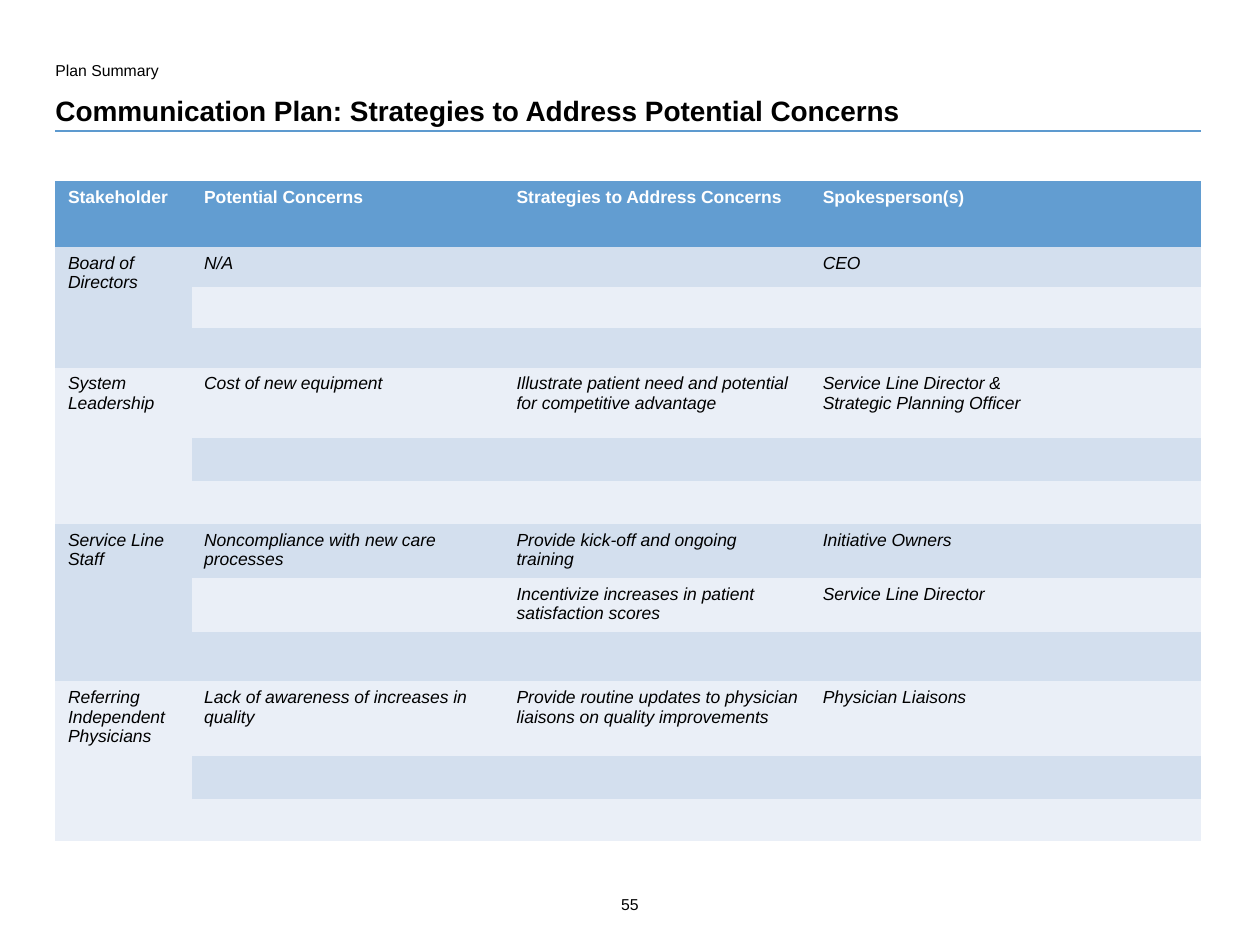
from lxml.etree import SubElement
from pptx import Presentation
from pptx.dml.color import RGBColor
from pptx.enum.shapes import MSO_CONNECTOR
from pptx.enum.text import MSO_ANCHOR, MSO_AUTO_SIZE, PP_ALIGN
from pptx.oxml.ns import qn
from pptx.util import Inches, Pt

TITLE = "Communication Plan: Strategies to Address Potential Concerns"
SECTION = "Plan Summary"
PAGE_NUMBER = "55"
HEADERS = ["Stakeholder", "Potential Concerns", "Strategies to Address Concerns", "Spokesperson(s)"]
GROUPS = [
    ("Board of Directors", [("N/A", "", "CEO")]),
    ("System Leadership", [
        ("Cost of new equipment",
         "Illustrate patient need and potential for competitive advantage",
         "Service Line Director & \vStrategic Planning Officer"),
    ]),
    ("Service Line Staff", [
        ("Noncompliance with new care processes", "Provide kick-off and ongoing training", "Initiative Owners"),
        ("", "Incentivize increases in patient satisfaction scores", "Service Line Director"),
    ]),
    ("Referring Independent Physicians", [
        ("Lack of awareness of increases in quality",
         "Provide routine updates to physician liaisons on quality improvements",
         "Physician Liaisons"),
    ]),
]
GROUP_ROWS = 3
COLUMN_WIDTHS = [1.08, 2.48, 2.43, 3.1]
ROW_HEIGHTS = [0.52, 0.32, 0.32, 0.32, 0.56, 0.34, 0.34, 0.43, 0.43, 0.39, 0.59, 0.34, 0.34]
LEFT, TABLE_TOP, RULE_TOP = 0.44, 1.44, 1.04
WIDTH = sum(COLUMN_WIDTHS)

BLACK = RGBColor(0x00, 0x00, 0x00)
WHITE = RGBColor(0xFF, 0xFF, 0xFF)
RULE_BLUE = RGBColor(0x5D, 0x9A, 0xCF)
HEADER_BLUE = RGBColor(0x62, 0x9D, 0xD1)
BANDS = [RGBColor(0xD3, 0xDF, 0xEE), RGBColor(0xEA, 0xEF, 0xF7)]
NO_STYLE = "{2D5ABB26-0587-4C30-8999-92F81FD0307C}"


def write(frame, text, size, color=BLACK, align=PP_ALIGN.LEFT, **styles):
    """Put one formatted paragraph in a text frame, sizing breaks and empty ends too."""
    para = frame.paragraphs[0]
    para.text = text
    para.alignment = align
    formats = {"name": "Arial", "size": Pt(size), "bold": False, "italic": False, **styles}
    for span in para.runs:
        for name, value in formats.items():
            setattr(span.font, name, value)
        span.font.color.rgb = color
    for line_break in para._p.findall(qn("a:br")):
        SubElement(line_break, qn("a:rPr"), sz=str(size * 100))
    if not text:
        SubElement(para._p, qn("a:endParaRPr"), sz=str(size * 100))


def place(box, left, top, width, height, side, edge, anchor):
    """Set a text shape's position, insets and anchor."""
    for name, value in zip(("left", "top", "width", "height"), (left, top, width, height)):
        setattr(box, name, Inches(value))
    settings = {
        "margin_left": Inches(side), "margin_right": Inches(side),
        "margin_top": Inches(edge), "margin_bottom": Inches(edge),
        "word_wrap": True, "auto_size": MSO_AUTO_SIZE.NONE, "vertical_anchor": anchor,
    }
    for name, value in settings.items():
        setattr(box.text_frame, name, value)


def add_label(page, text, bounds, side, align):
    """Add a small text box."""
    box = page.shapes.add_textbox(0, 0, 0, 0)
    place(box, *bounds, side, 0.04, MSO_ANCHOR.TOP)
    write(box.text_frame, text, 9, align=align)


def add_rule(page):
    """Draw the line under the title."""
    rule = page.shapes.add_connector(
        MSO_CONNECTOR.STRAIGHT, Inches(LEFT), Inches(RULE_TOP), Inches(LEFT + WIDTH), Inches(RULE_TOP))
    rule.line.color.rgb = RULE_BLUE
    rule.line.width = Pt(0.75)
    SubElement(rule._element.spPr, qn("a:effectLst"))


def add_plan(page):
    """Add the stakeholder table with alternating bands and merged first-column cells."""
    rows = [HEADERS]
    for stakeholder, entries in GROUPS:
        blanks = [("", "", "")] * (GROUP_ROWS - len(entries))
        for index, entry in enumerate(entries + blanks):
            rows.append(["" if index else stakeholder, *entry])
    table = page.shapes.add_table(
        len(rows), len(HEADERS), Inches(LEFT), Inches(TABLE_TOP),
        Inches(WIDTH), Inches(sum(ROW_HEIGHTS))).table
    table._tbl.tblPr.find(qn("a:tableStyleId")).text = NO_STYLE
    for column, width in zip(table.columns, COLUMN_WIDTHS):
        column.width = Inches(width)
    for number, (row, height, texts) in enumerate(zip(table.rows, ROW_HEIGHTS, rows)):
        row.height = Inches(height)
        for cell, text in zip(row.cells, texts):
            cell.fill.solid()
            cell.fill.fore_color.rgb = BANDS[(number - 1) % 2] if number else HEADER_BLUE
            write(cell.text_frame, text, 10, BLACK if number else WHITE,
                  bold=number == 0, italic=number > 0)
    for first in range(1, len(rows), GROUP_ROWS):
        table.cell(first, 0).merge(table.cell(first + GROUP_ROWS - 1, 0))


def main():
    """Build and save the slide."""
    deck = Presentation()
    deck.slide_width, deck.slide_height = Inches(10), Inches(7.5)
    page = deck.slides.add_slide(deck.slide_layouts[5])
    add_rule(page)
    place(page.shapes.title, LEFT, 0.74, WIDTH, 0.27, 0, 0, MSO_ANCHOR.BOTTOM)
    write(page.shapes.title.text_frame, TITLE, 16, bold=True)
    add_label(page, SECTION, (LEFT, 0.44, 2.89, 0.2), 0, PP_ALIGN.LEFT)
    add_label(page, PAGE_NUMBER, (4.66, 7.06, 0.68, 0.26), 0.04, PP_ALIGN.CENTER)
    add_plan(page)
    deck.save("out.pptx")


if __name__ == "__main__":
    main()
